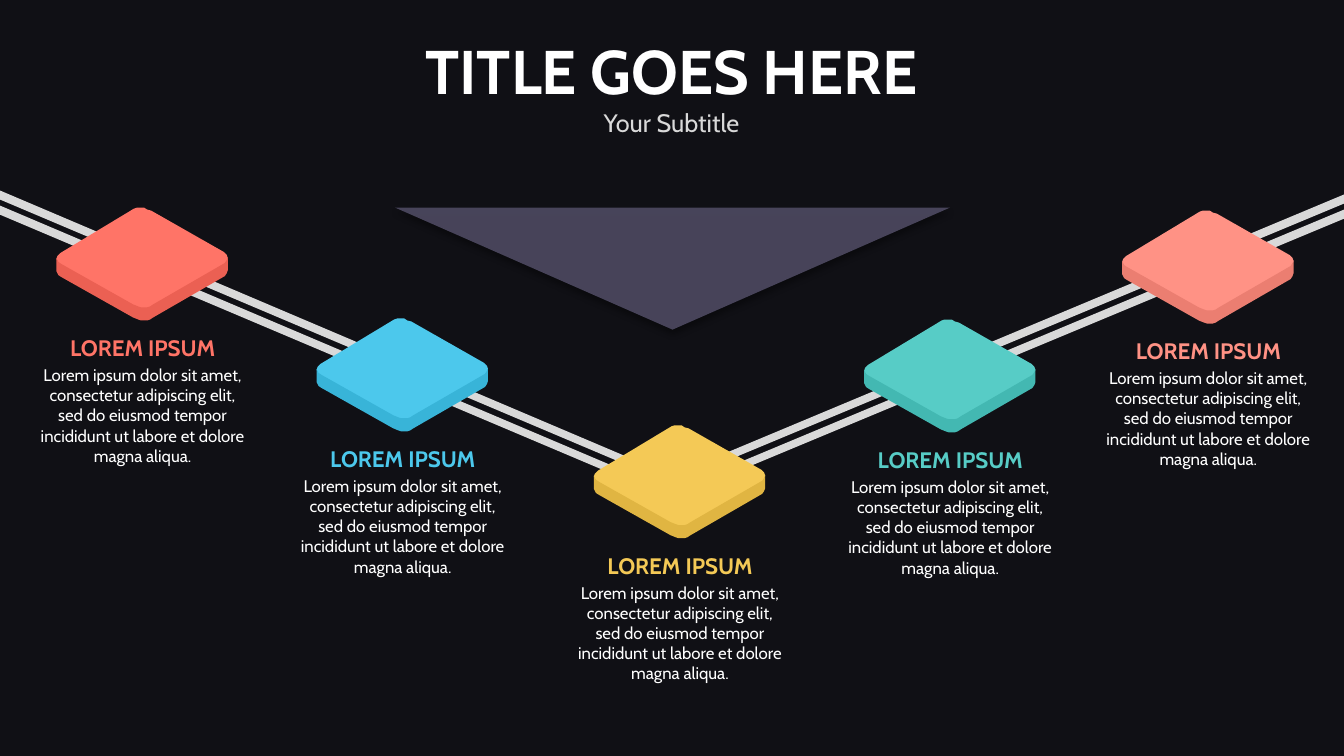
from pptx import Presentation
from pptx.dml.color import RGBColor
from pptx.enum import shapes as kinds, text as txt
from pptx.oxml import parse_xml
from pptx.oxml.ns import nsdecls
from pptx.util import Inches, Pt

FONT = "Cabin"
WHITE, GREY, BACK, SLATE = "FFFFFF", "D9D9D9", "101015", "524E67"
TITLE, SUB = "TITLE GOES HERE", "Your Subtitle"
HEAD = "LOREM IPSUM"
BODY = ("Lorem ipsum dolor sit amet, consectetur adipiscing elit, sed do "
        "eiusmod tempor incididunt ut labore et dolore magna aliqua.")

STEPS = [
    (5.89, 4.22, "F4C956", "E0B542"),
    (8.57, 3.17, "57CCC6", "43B8B2"),
    (3.14, 3.16, "4CC8EC", "38B4D8"),
    (11.13, 2.09, "FF9285", "EB7E71"),
    (0.56, 2.06, "FF7467", "EB6053"),
]
LANE = [(0, 2.04), (6.66, 4.87), (13.33, 2.08),
        (13.33, 2.17), (6.66, 4.95), (0, 2.13)]
GAP = 0.15
BACK_EDGE = [(0.01, 0.48), (0.04, 0.45), (0.77, 0.01), (0.8, 0), (0.83, 0),
             (0.87, 0), (0.9, 0.02), (0.94, 0.03), (1.66, 0.44), (1.69, 0.47)]
FRONT = [(1.7, 0.5), (1.69, 0.53), (1.67, 0.56), (0.96, 0.97), (0.93, 0.99),
         (0.9, 1), (0.87, 1), (0.84, 1), (0.81, 0.99), (0.76, 0.97),
         (0.05, 0.57), (0.02, 0.55), (0, 0.51)]
DEPTH, LAP = 0.12, 0.01


def color(code):
    return RGBColor.from_string(code)


def paint(shape, code):
    shape.shadow.inherit = False
    shape.fill.solid()
    shape.fill.fore_color.rgb = color(code)
    shape.line.fill.background()


def shift(pts, dx, dy):
    return [(x + dx, y + dy) for x, y in pts]


def outline(home, code, *loops):
    loops = [[(Inches(x), Inches(y)) for x, y in loop] for loop in loops]
    pen = home.build_freeform(*loops[0][0], scale=1.0)
    for num, loop in enumerate(loops):
        if num:
            pen.move_to(*loop[0])
        pen.add_line_segments(loop[1:], close=True)
    paint(pen.convert_to_shape(), code)


def write(frame, lines, gap=0):
    frame.word_wrap = True
    frame.auto_size = txt.MSO_AUTO_SIZE.NONE
    frame.vertical_anchor = txt.MSO_ANCHOR.TOP
    for num, (words, size, code, bold) in enumerate(lines):
        para = frame.add_paragraph() if num else frame.paragraphs[0]
        para.alignment = txt.PP_ALIGN.CENTER
        para.space_before = Pt(gap if num else 0)
        run = para.add_run()
        run.text = words
        font = run.font
        font.name, font.size, font.bold = FONT, Pt(size), bold
        font.color.rgb = color(code)


def place(x, y, w, h):
    return [Inches(n) for n in (x, y, w, h)]


def add_step(home, x, y, face, side):
    tile = home.add_group_shape().shapes
    outline(tile, face, shift(BACK_EDGE + FRONT, x, y))
    wall = shift(FRONT, 0, -LAP) + shift(FRONT[::-1], 0, DEPTH)
    outline(tile, side, shift(wall, x, y))
    box = home.add_textbox(*place(x - 0.28, y + 1.21, 2.27, 1.42))
    write(box.text_frame,
          [(HEAD, 16, face, True), (BODY, 12, WHITE, False)], 2.4)


def add_arrow(home):
    arrow = home.add_shape(kinds.MSO_SHAPE.ISOSCELES_TRIANGLE,
                           *place(3.92, 2.06, 5.5, 1.21))
    arrow.rotation = 180
    paint(arrow, SLATE)
    props = arrow.fill._xPr
    tone = props.find(".//{*}srgbClr")
    tone.append(parse_xml(f'<a:alpha {nsdecls("a")} val="85000"/>'))
    glow = props.find("{*}effectLst")
    glow.append(parse_xml(
        f'<a:outerShdw {nsdecls("a")} blurRad="{Pt(4)}" dist="{Pt(3)}" '
        'dir="5400000" rotWithShape="0"><a:srgbClr val="000000">'
        '<a:alpha val="40000"/></a:srgbClr></a:outerShdw>'))


def main():
    deck = Presentation()
    deck.slide_width, deck.slide_height = Inches(13.33), Inches(7.5)
    slide = deck.slides.add_slide(deck.slide_layouts[5])
    slide.background.fill.solid()
    slide.background.fill.fore_color.rgb = color(BACK)
    home = slide.shapes

    outline(home, GREY, LANE, shift(LANE, 0, -GAP))
    for step in STEPS:
        add_step(home, *step)

    title = home.title
    title.left, title.top, title.width, title.height = place(
        3.65, 0.28, 6.02, 1.2)
    write(title.text_frame,
          [(TITLE, 44, WHITE, True), (SUB, 18, GREY, False)])
    add_arrow(home)
    deck.save("out.pptx")


if __name__ == "__main__":
    main()
